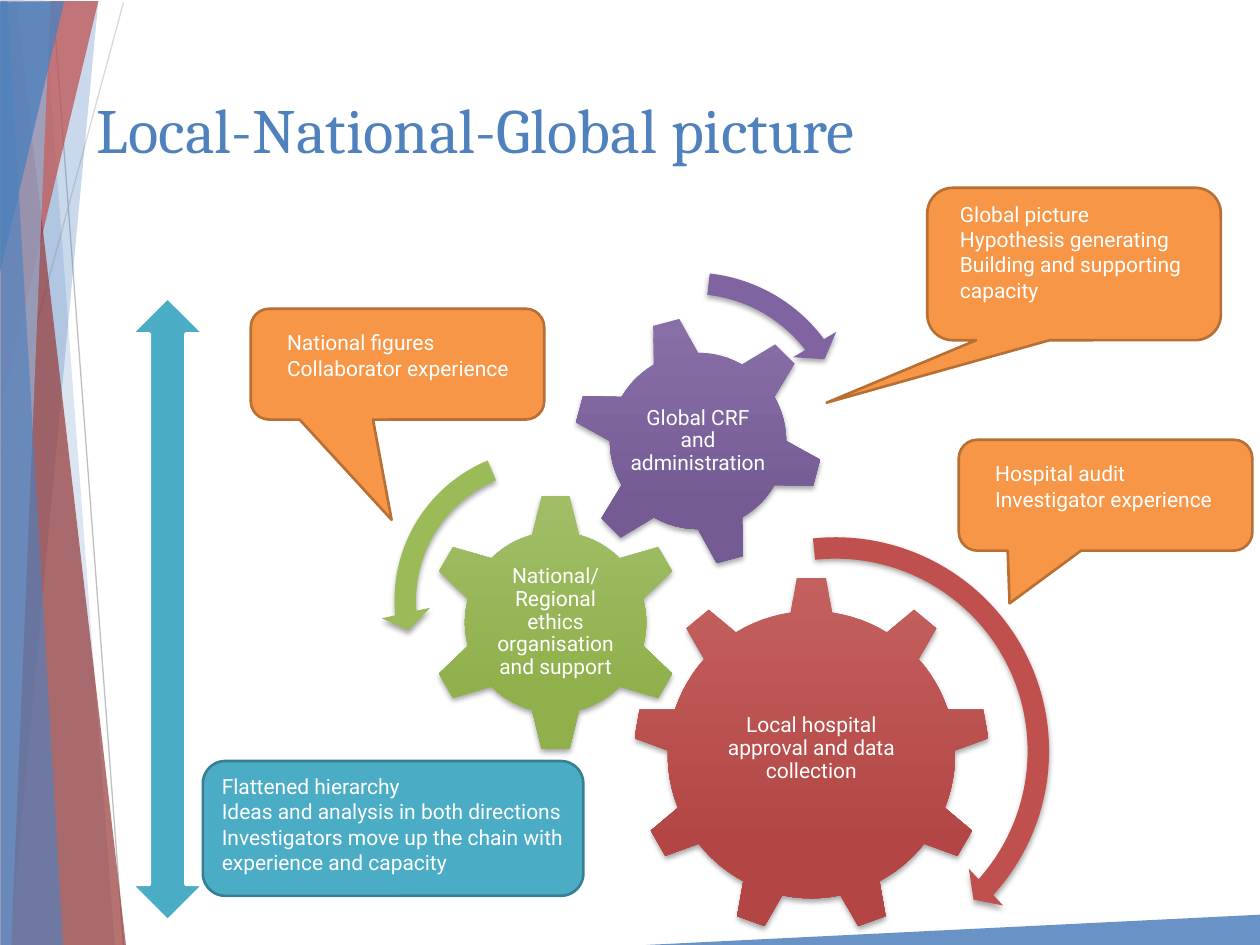
from dataclasses import dataclass
from math import cos, radians, sin
from typing import Any, NamedTuple

from lxml import etree
from pptx import Presentation
from pptx.dml.color import RGBColor
from pptx.enum.shapes import MSO_CONNECTOR, MSO_SHAPE
from pptx.enum.text import MSO_ANCHOR, MSO_AUTO_SIZE, PP_ALIGN
from pptx.oxml.ns import qn
from pptx.util import Pt

PX = 9144  # EMU in one px, 100 px to the inch
STRAIGHT = MSO_CONNECTOR.STRAIGHT
CALLOUT = MSO_SHAPE.ROUNDED_RECTANGULAR_CALLOUT
ROUNDED = MSO_SHAPE.ROUNDED_RECTANGLE
DOUBLE_ARROW = MSO_SHAPE.UP_DOWN_ARROW
CLOCKWISE = MSO_SHAPE.CIRCULAR_ARROW
ANTICLOCKWISE = MSO_SHAPE.LEFT_CIRCULAR_ARROW
TOP, MIDDLE = MSO_ANCHOR.TOP, MSO_ANCHOR.MIDDLE
LEFT, CENTER = PP_ALIGN.LEFT, PP_ALIGN.CENTER
GROW, FIXED = MSO_AUTO_SIZE.SHAPE_TO_FIT_TEXT, MSO_AUTO_SIZE.NONE


@dataclass(frozen=True)
class Theme:
    blue: str = "4F81BD"
    pale_blue: str = "95B3D7"
    red: str = "C0504D"
    dark_red: str = "953735"
    green: str = "9BBB59"
    purple: str = "8064A2"
    orange: str = "F79646"
    orange_edge: str = "B76F34"
    teal: str = "4BACC6"
    teal_edge: str = "377F92"
    white: str = "FFFFFF"
    title_font: str = "Cambria"
    body_font: str = "Roboto"
    title_size: int = 36
    body_size: int = 12


THEME = Theme()


class Box(NamedTuple):
    left: int
    top: int
    width: int
    height: int


class Band(NamedTuple):
    color: str
    opacity: int
    points: list[tuple[int, int]]


class Gear(NamedTuple):
    center: tuple[int, int]
    teeth: int
    phase: int
    radii: tuple[int, int]  # root, tip
    half_angles: tuple[float, float]  # root, tip
    gradient: tuple[str, str]
    insets: tuple[int, int, int, int]
    text: str


class Turn(NamedTuple):
    kind: Any
    box: Box
    rotation: float
    adjustments: tuple[float, ...]
    color: str


class Callout(NamedTuple):
    box: Box
    pointer: tuple[float, float]
    text_box: Box
    lines: list[str]


BANDS = [
    Band(THEME.blue, 30, [(8, 750), (78, 1), (0, 0), (0, 750)]),
    Band(THEME.blue, 20, [(91, 750), (35, 1), (0, 1), (0, 750)]),
    Band(THEME.red, 72, [(78, 1), (1, 322), (0, 1)]),
    Band(THEME.dark_red, 70, [(100, 750), (13, 1), (0, 2), (0, 750)]),
    Band(THEME.pale_blue, 70, [(9, 750), (40, 1), (0, 1), (0, 750)]),
    Band(THEME.blue, 65, [(50, 750), (6, 1), (1, 1), (1, 750)]),
    Band(THEME.blue, 80, [(51, 1), (0, 216), (0, 2)]),
    Band(THEME.blue, 85, [(513, 750), (1000, 726), (1000, 750)]),
]
GUIDES = [((98, 2), (1, 361), "D9D9D9"), ((98, 750), (42, 1), "BFBFBF")]
GEARS = [
    Gear((644, 599), 9, 0, (114, 141), (8.3, 4.7), ("C3605E", "B34644"),
         (58, 67, 58, 72), "Local hospital approval and data collection"),
    Gear((441, 494), 6, 0, (72, 101), (15, 6.3), ("A1BE67", "90B04C"),
         (43, 50, 43, 50), "National/ Regional ethics organisation and support"),
    Gear((554, 350), 6, -15, (70, 98), (15, 6.3), ("8870A7", "755B94"),
         (43, 43, 43, 43), "Global CRF and administration"),
]
TURNS = [
    Turn(CLOCKWISE, Box(482, 415, 362, 362), 0,
         (0.047, 2.99, 25.271, 158.378, 0.055), THEME.red),
    Turn(ANTICLOCKWISE, Box(302, 345, 263, 263), 0,
         (0.065, 4.3, 104.891, 148.378, 0.075), THEME.green),
    Turn(CLOCKWISE, Box(407, 205, 284, 284), 101.1,
         (0.06, 3.941, 133.138, 105.082, 0.07), THEME.purple),
]
CALLOUTS = [
    Callout(Box(761, 349, 233, 88), (-0.327, 0.976), Box(780, 361, 205, 50),
            ["Hospital audit", "Investigator experience"]),
    Callout(Box(199, 245, 233, 88), (-0.02, 1.404), Box(218, 257, 205, 50),
            ["National figures", "Collaborator experience"]),
    Callout(Box(736, 149, 233, 121), (-0.843, 0.91), Box(752, 155, 205, 125),
            ["Global picture", "Hypothesis generating",
             "Building and supporting capacity"]),
]
HIERARCHY = ["Flattened hierarchy", "Ideas and analysis in both directions",
             "Investigators move up the chain with experience and capacity"]


def emu(values) -> list[int]:
    return [round(value * PX) for value in values]


def apply(target: Any, values: dict[str, Any]) -> None:
    for name, value in values.items():
        setattr(target, name, value)


def write(shape, lines: list[str], insets=(10, 5, 10, 5), anchor=TOP, align=LEFT,
          spacing=1.0, fit=FIXED, font=THEME.body_font, size=THEME.body_size,
          color=THEME.white) -> None:
    left, top, right, bottom = emu(insets)
    frame = shape.text_frame
    apply(frame, {"word_wrap": True, "auto_size": fit, "vertical_anchor": anchor,
                  "margin_left": left, "margin_top": top,
                  "margin_right": right, "margin_bottom": bottom})
    for index, line in enumerate(lines):
        para = frame.paragraphs[0] if index == 0 else frame.add_paragraph()
        apply(para, {"alignment": align, "line_spacing": spacing})
        span = para.add_run()
        apply(span, {"text": line})
        apply(span.font, {"name": font, "size": Pt(size)})
        span.font.color.rgb = RGBColor.from_string(color)


def paint(shape, fill: str, edge: str = "", edge_width: float = 1.5) -> None:
    shape.shadow.inherit = False
    shape.fill.solid()
    shape.fill.fore_color.rgb = RGBColor.from_string(fill)
    if edge:
        shape.line.color.rgb = RGBColor.from_string(edge)
        shape.line.width = Pt(edge_width)
    else:
        shape.line.fill.background()


def cast_shadow(shape) -> None:
    effects = shape._element.spPr.find(qn("a:effectLst"))
    shadow = etree.SubElement(effects, qn("a:outerShdw"), blurRad="40000",
                              dist="23000", dir="5400000", rotWithShape="0")
    black = etree.SubElement(shadow, qn("a:srgbClr"), val="000000")
    etree.SubElement(black, qn("a:alpha"), val="35000")


def add_outline(page, points):
    start, *rest = [tuple(emu(point)) for point in points]
    builder = page.shapes.build_freeform(*start, scale=1.0)
    builder.add_line_segments(rest, close=True)
    return builder.convert_to_shape()


def add_band(page, band: Band) -> None:
    shape = add_outline(page, band.points)
    paint(shape, band.color)
    color = shape._element.spPr.find(qn("a:solidFill"))[0]
    etree.SubElement(color, qn("a:alpha"), val=str(band.opacity * 1000))


def add_guide(page, start, end, color: str) -> None:
    line = page.shapes.add_connector(STRAIGHT, *emu(start + end))
    line.line.color.rgb = RGBColor.from_string(color)
    line.line.width = Pt(0.75)
    etree.SubElement(line._element.spPr, qn("a:effectLst"))


def gear_points(gear: Gear, arc_steps: int = 6) -> list[tuple[float, float]]:
    """Each tooth is two tip corners, followed by the root arc to the next tooth."""
    (root, tip), (root_half, tip_half) = gear.radii, gear.half_angles
    pitch = 360 / gear.teeth
    step = (pitch - 2 * root_half) / arc_steps
    polar = []
    for tooth in range(gear.teeth):
        middle = gear.phase + tooth * pitch
        polar += [(tip, middle - tip_half), (tip, middle + tip_half)]
        polar += [(root, middle + root_half + step * i) for i in range(arc_steps + 1)]
    x, y = gear.center
    return [(x + r * sin(radians(a)), y - r * cos(radians(a))) for r, a in polar]


def add_gear(page, gear: Gear) -> None:
    shape = add_outline(page, gear_points(gear))
    paint(shape, gear.gradient[0])
    shape.fill.gradient()
    shape.fill.gradient_angle = 270
    for stop, color, position in zip(shape.fill.gradient_stops, gear.gradient, (0, 0.78)):
        stop.color.rgb = RGBColor.from_string(color)
        stop.position = position
    cast_shadow(shape)
    write(shape, [gear.text], gear.insets, MIDDLE, CENTER, spacing=0.9)


def add_preset(page, kind, box: Box, adjustments=()):
    shape = page.shapes.add_shape(kind, *emu(box))
    for index, value in enumerate(adjustments):
        shape.adjustments[index] = value
    return shape


def add_turn(page, turn: Turn) -> None:
    shape = add_preset(page, turn.kind, turn.box, turn.adjustments)
    shape.rotation = turn.rotation
    paint(shape, turn.color)
    cast_shadow(shape)


def add_callout(page, callout: Callout) -> None:
    bubble = add_preset(page, CALLOUT, callout.box, (*callout.pointer, 0.167))
    paint(bubble, THEME.orange, THEME.orange_edge)
    write(page.shapes.add_textbox(*emu(callout.text_box)), callout.lines, fit=GROW)


def main() -> None:
    deck = Presentation()
    apply(deck, {"slide_width": 1000 * PX, "slide_height": 750 * PX})
    page = deck.slides.add_slide(deck.slide_layouts[6])

    # Background ribbons
    for guide in GUIDES:
        add_guide(page, *guide)
    for band in BANDS:
        add_band(page, band)

    # Title
    title = page.shapes.add_textbox(*emu(Box(67, 67, 878, 144)))
    write(title, ["Local-National-Global picture"], font=THEME.title_font,
          size=THEME.title_size, color=THEME.blue)

    # Gears, their turning arrows and callouts
    for gear in GEARS:
        add_gear(page, gear)
    for turn in TURNS:
        add_turn(page, turn)
    for callout in CALLOUTS:
        add_callout(page, callout)

    # Hierarchy arrow and summary
    paint(add_preset(page, DOUBLE_ARROW, Box(104, 236, 58, 495)),
          THEME.teal, THEME.white, 2)
    summary = add_preset(page, ROUNDED, Box(161, 604, 302, 107))
    paint(summary, THEME.teal, THEME.teal_edge)
    write(summary, HIERARCHY, insets=(10, 5, 2, 5))

    deck.save("out.pptx")


if __name__ == "__main__":
    main()
